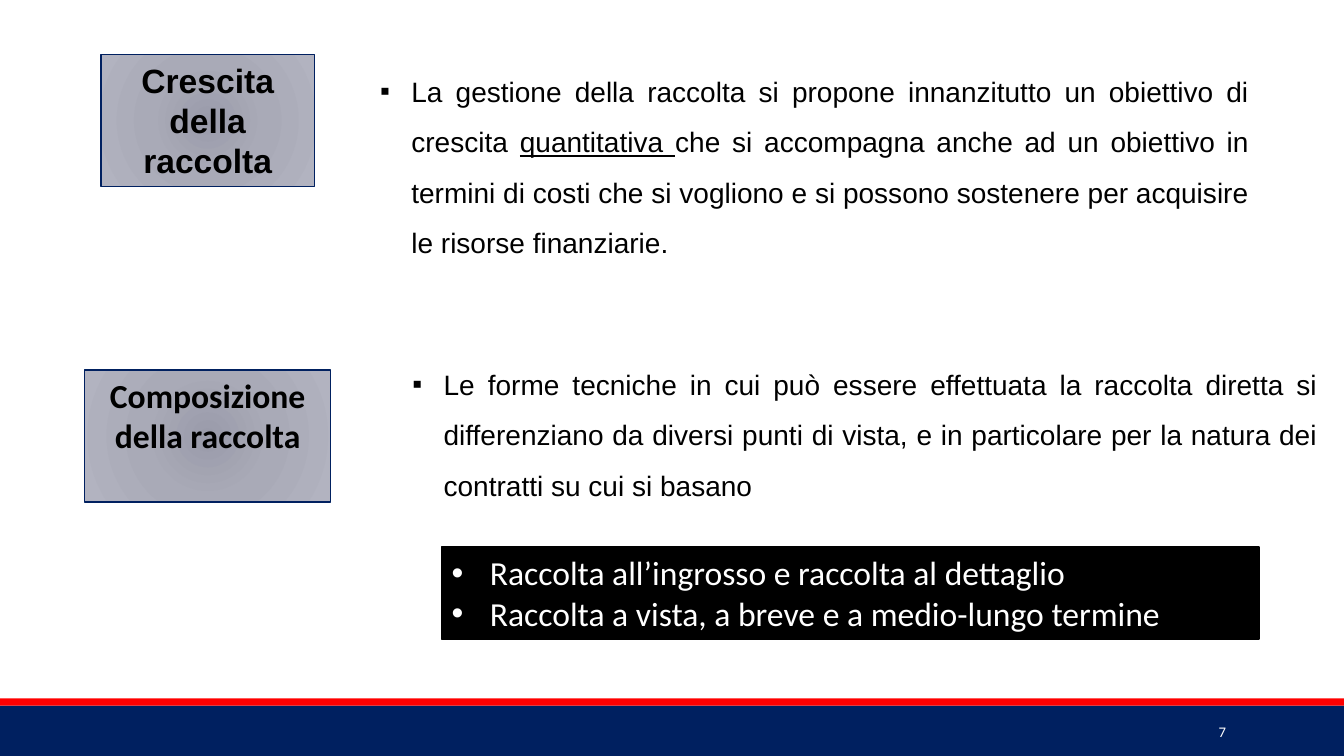
from dataclasses import dataclass

from lxml import etree
from pptx import Presentation
from pptx.dml.color import RGBColor
from pptx.enum.shapes import MSO_SHAPE as Shape
from pptx.enum.text import MSO_ANCHOR as Anchor, MSO_AUTO_SIZE as AutoSize, PP_ALIGN as Align
from pptx.oxml.ns import qn
from pptx.util import Inches, Pt


@dataclass(frozen=True)
class Theme:
    navy: str = "002060"
    red: str = "FF0000"
    black: str = "000000"
    white: str = "FFFFFF"
    heading_gradient: tuple = ((0, "9A9BAA"), (45, "A9AAB7"), (100, "B2B3C0"))
    sans: str = "Arial"
    accent: str = "Calibri"
    heading_size: float = 24
    body_size: float = 20
    number_size: float = 10.5


THEME = Theme()

# Content: each run is (text, underlined); boxes are left, top, width, height
SECTIONS = [
    {
        "heading": "Crescita della raccolta",
        "heading_font": THEME.sans,
        "heading_box": (1, 0.54, 2.12, 1.31),
        "body": [
            ("La gestione della raccolta si propone innanzitutto un obiettivo di crescita ", False),
            ("quantitativa ", True),
            ("che si accompagna anche ad un obiettivo in termini di costi che si vogliono "
             "e si possono sostenere per acquisire le risorse finanziarie.", False),
        ],
        "body_box": (3.67, 0.52, 8.82, 2.06),
    },
    {
        "heading": "Composizione della raccolta",
        "heading_font": THEME.accent,
        "heading_box": (0.84, 3.67, 2.44, 1.31),
        "body": [
            ("Le forme tecniche in cui può essere effettuata la raccolta diretta si "
             "differenziano da diversi punti di vista, e in particolare per la natura dei "
             "contratti su cui si basano", False),
        ],
        "body_box": (3.99, 3.43, 9.18, 1.55),
    },
]
FUNDING_TYPES = [
    "Raccolta all’ingrosso e raccolta al dettaglio",
    "Raccolta a vista, a breve e a medio-lungo termine",
]
FUNDING_BOX = (4.38, 5.43, 8.11, 0.91)
FOOTER_BARS = [((0, 7, 13.33, 0.5), THEME.navy), ((0, 6.93, 13.33, 0.07), THEME.red)]
PAGE_NUMBER = "7"
PAGE_NUMBER_BOX = (10.83, 7.06, 1.43, 0.4)


def place(shape, box):
    shape.left, shape.top, shape.width, shape.height = map(Inches, box)


def prepare_frame(shape, anchor=Anchor.TOP):
    frame = shape.text_frame
    frame.word_wrap = True
    frame.auto_size = AutoSize.NONE
    frame.vertical_anchor = anchor
    return frame


def format_paragraph(paragraph, align, spacing=1.0):
    paragraph.alignment = align
    paragraph.line_spacing = spacing
    paragraph.space_before = Pt(0)


def add_bullet(paragraph, symbol, indent):
    props = paragraph._p.get_or_add_pPr()
    props.set("marL", str(Inches(indent)))
    props.set("indent", str(-Inches(indent)))
    etree.SubElement(props, qn("a:buFont")).set("typeface", THEME.sans)
    etree.SubElement(props, qn("a:buChar")).set("char", symbol)


def add_run(paragraph, text, font, size, color, bold=False, underline=False):
    run = paragraph.add_run()
    run.text = text
    run.font.name = font
    run.font.size = Pt(size)
    run.font.color.rgb = RGBColor.from_string(color)
    run.font.bold = bold
    run.font.underline = underline


def fill_radial(shape, stops):
    shape.fill.gradient()
    gradient = shape._element.spPr.find(qn("a:gradFill"))
    for child in list(gradient):
        gradient.remove(child)
    stop_list = etree.SubElement(gradient, qn("a:gsLst"))
    for percent, color in stops:
        stop = etree.SubElement(stop_list, qn("a:gs"), pos=str(percent * 1000))
        etree.SubElement(stop, qn("a:srgbClr"), val=color)
    circle = etree.SubElement(gradient, qn("a:path"), path="circle")
    etree.SubElement(circle, qn("a:fillToRect"), l="50000", t="50000", r="50000", b="50000")


def add_rectangle(slide, box, color):
    rectangle = slide.shapes.add_shape(Shape.RECTANGLE, *map(Inches, box))
    rectangle.shadow.inherit = False
    rectangle.fill.solid()
    rectangle.fill.fore_color.rgb = RGBColor.from_string(color)
    rectangle.line.fill.background()
    return rectangle


def outline(shape, color, width):
    shape.line.color.rgb = RGBColor.from_string(color)
    shape.line.width = Pt(width)


def fill_section(section, heading, body):
    place(heading, section["heading_box"])
    fill_radial(heading, THEME.heading_gradient)
    outline(heading, THEME.navy, 1)
    title = prepare_frame(heading).paragraphs[0]
    format_paragraph(title, Align.CENTER)
    add_run(title, section["heading"], section["heading_font"], THEME.heading_size,
            THEME.black, bold=True)

    place(body, section["body_box"])
    point = prepare_frame(body).paragraphs[0]
    format_paragraph(point, Align.JUSTIFY, 1.5)
    add_bullet(point, "▪", 0.31)
    for text, underlined in section["body"]:
        add_run(point, text, THEME.sans, THEME.body_size, THEME.black, underline=underlined)


def main():
    deck = Presentation()
    deck.slide_width, deck.slide_height = Inches(13.33), Inches(7.5)
    comparison_layout = deck.slide_layouts[4]
    slide = deck.slides.add_slide(comparison_layout)
    title, *pairs = slide.placeholders
    title._element.getparent().remove(title._element)

    # Footer
    for box, color in FOOTER_BARS:
        add_rectangle(slide, box, color)
    number_box = slide.shapes.add_textbox(*map(Inches, PAGE_NUMBER_BOX))
    number = prepare_frame(number_box, Anchor.MIDDLE).paragraphs[0]
    format_paragraph(number, Align.RIGHT)
    add_run(number, PAGE_NUMBER, THEME.accent, THEME.number_size, THEME.white)

    # Headings with their explanations
    for section, heading, body in zip(SECTIONS, pairs[::2], pairs[1::2]):
        fill_section(section, heading, body)

    # Types of funding
    funding = add_rectangle(slide, FUNDING_BOX, THEME.black)
    outline(funding, THEME.black, 1.25)
    frame = prepare_frame(funding)
    for index, funding_type in enumerate(FUNDING_TYPES):
        item = frame.add_paragraph() if index else frame.paragraphs[0]
        format_paragraph(item, Align.LEFT)
        add_bullet(item, "•", 0.38)
        add_run(item, funding_type, THEME.accent, THEME.heading_size, THEME.white)

    deck.save("out.pptx")


if __name__ == "__main__":
    main()
